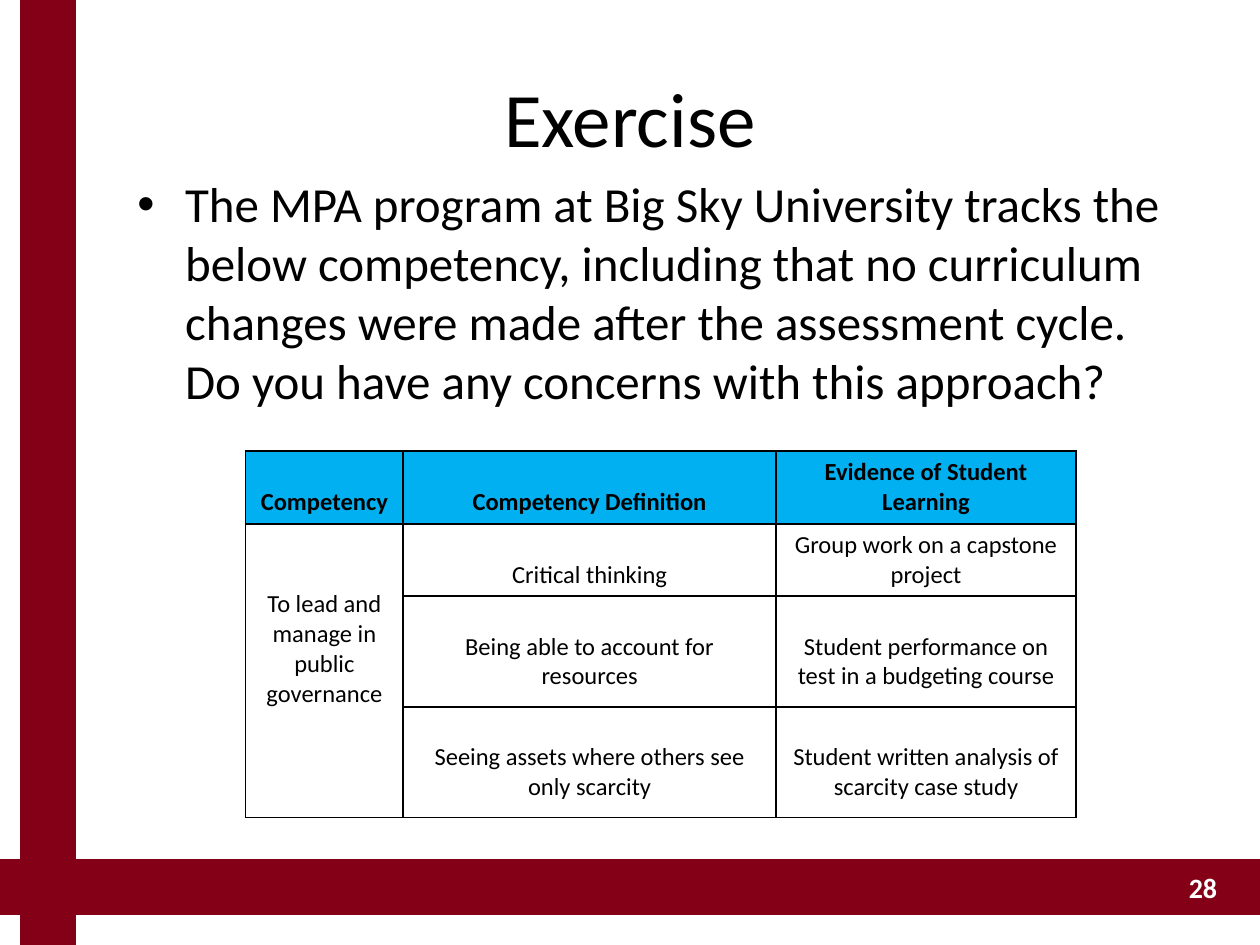
from dataclasses import dataclass

from lxml import etree
from pptx import Presentation
from pptx.dml.color import RGBColor
from pptx.enum.shapes import MSO_SHAPE
from pptx.enum.text import MSO_ANCHOR, PP_ALIGN
from pptx.oxml.ns import qn
from pptx.util import Inches, Pt

RECT = MSO_SHAPE.RECTANGLE
TOP, MIDDLE = MSO_ANCHOR.TOP, MSO_ANCHOR.MIDDLE
LEFT, CENTER, RIGHT = PP_ALIGN.LEFT, PP_ALIGN.CENTER, PP_ALIGN.RIGHT


@dataclass(frozen=True)
class Theme:
    font: str = "Calibri"
    band: str = "840017"
    head: str = "00B0F0"
    ink: str = "000000"
    paper: str = "FFFFFF"
    title: int = 44
    body: int = 28
    cell: int = 14
    page: int = 16


THEME = Theme()
PAD = 0.05
LINE = 0.235  # height of one line of cell text
COLS = (1.25, 2.96, 2.38)
ROWS = (0.58, 0.57, 0.88, 0.88)
# Each cell holds its text and the number of lines it is dropped by.
CELLS = (
    (("Competency", 1), ("Competency Definition", 1),
     ("Evidence of Student Learning", 0)),
    (("To lead and manage in public governance", 2),
     ("Critical thinking", 1), ("Group work on a capstone project", 0)),
    (None, ("Being able to account for resources", 1),
     ("Student performance on test in a budgeting course", 1)),
    (None, ("Seeing assets where others see only scarcity", 1),
     ("Student written analysis of scarcity case study", 1)),
)
TASK = ("The MPA program at Big Sky University tracks the below competency, "
        "including that no curriculum changes were made after the assessment "
        "cycle. Do you have any concerns with this approach?")


def paint(fill, color):
    fill.solid()
    fill.fore_color.rgb = RGBColor.from_string(color)


def style(par, size, color=THEME.ink, bold=False, align=LEFT):
    par.alignment = align
    for run in par.runs:
        run.font.name = THEME.font
        run.font.size = Pt(size)
        run.font.bold = bold
        run.font.color.rgb = RGBColor.from_string(color)


def add_band(slide, box):
    band = slide.shapes.add_shape(RECT, *map(Inches, box))
    band.shadow.inherit = False
    paint(band.fill, THEME.band)
    paint(band.line.fill, THEME.band)
    band.line.width = Pt(2)


def add_text(slide, box, text, anchor=TOP, wrap=True):
    """Add a padded text box and return its paragraph."""
    frame = slide.shapes.add_textbox(*map(Inches, box)).text_frame
    frame.word_wrap = wrap
    frame.vertical_anchor = anchor
    frame.margin_left = frame.margin_right = Inches(PAD)
    frame.margin_top = frame.margin_bottom = Inches(PAD)
    frame.text = text
    return frame.paragraphs[0]


def add_task(slide, box):
    par = add_text(slide, box, TASK)
    props = par._p.get_or_add_pPr()
    props.set("marL", str(Inches(0.38)))
    props.set("indent", str(-Inches(0.38)))
    etree.SubElement(props, qn("a:buFont"), typeface="Arial")
    etree.SubElement(props, qn("a:buChar"), char="•")
    style(par, THEME.body)


def edge(cell):
    """Draw the four borders, which come before the fill in the XML."""
    props = cell._tc.get_or_add_tcPr()
    for spot, side in enumerate(("lnL", "lnR", "lnT", "lnB")):
        line = etree.Element(qn("a:" + side), w=str(Pt(1)))
        fill = etree.SubElement(line, qn("a:solidFill"))
        etree.SubElement(fill, qn("a:srgbClr"), val=THEME.ink)
        props.insert(spot, line)


def add_grid(slide, box):
    table = slide.shapes.add_table(
        len(ROWS), len(COLS), *map(Inches, box)).table
    for col, width in zip(table.columns, COLS):
        col.width = Inches(width)
    for row, height in zip(table.rows, ROWS):
        row.height = Inches(height)
    table.cell(1, 0).merge(table.cell(3, 0))
    for r, row in enumerate(CELLS):
        for c, entry in enumerate(row):
            cell = table.cell(r, c)
            paint(cell.fill, THEME.paper if r else THEME.head)
            edge(cell)
            if entry:
                text, drop = entry
                cell.text_frame.text = text
                cell.margin_top = Inches(PAD + drop * LINE)
                cell.margin_bottom = Inches(PAD)
                style(cell.text_frame.paragraphs[0], THEME.cell,
                      bold=r == 0, align=CENTER)


def main():
    deck = Presentation()
    deck.slide_width, deck.slide_height = Inches(10), Inches(7.5)
    slide = deck.slides.add_slide(deck.slide_layouts[6])
    add_band(slide, (0, 6.83, 10, 0.42))
    add_band(slide, (0.17, 0, 0.42, 7.5))
    title = add_text(slide, (0.5, 0.3, 9, 1.25), "Exercise", MIDDLE)
    style(title, THEME.title, align=CENTER)
    add_task(slide, (1.04, 1.33, 8.46, 2.1))
    add_grid(slide, (1.95, 3.58, sum(COLS), sum(ROWS)))
    page = add_text(slide, (9.35, 6.86, 0.36, 0.37), "28", MIDDLE, wrap=False)
    style(page, THEME.page, THEME.paper, bold=True, align=RIGHT)
    deck.save("out.pptx")


if __name__ == "__main__":
    main()
